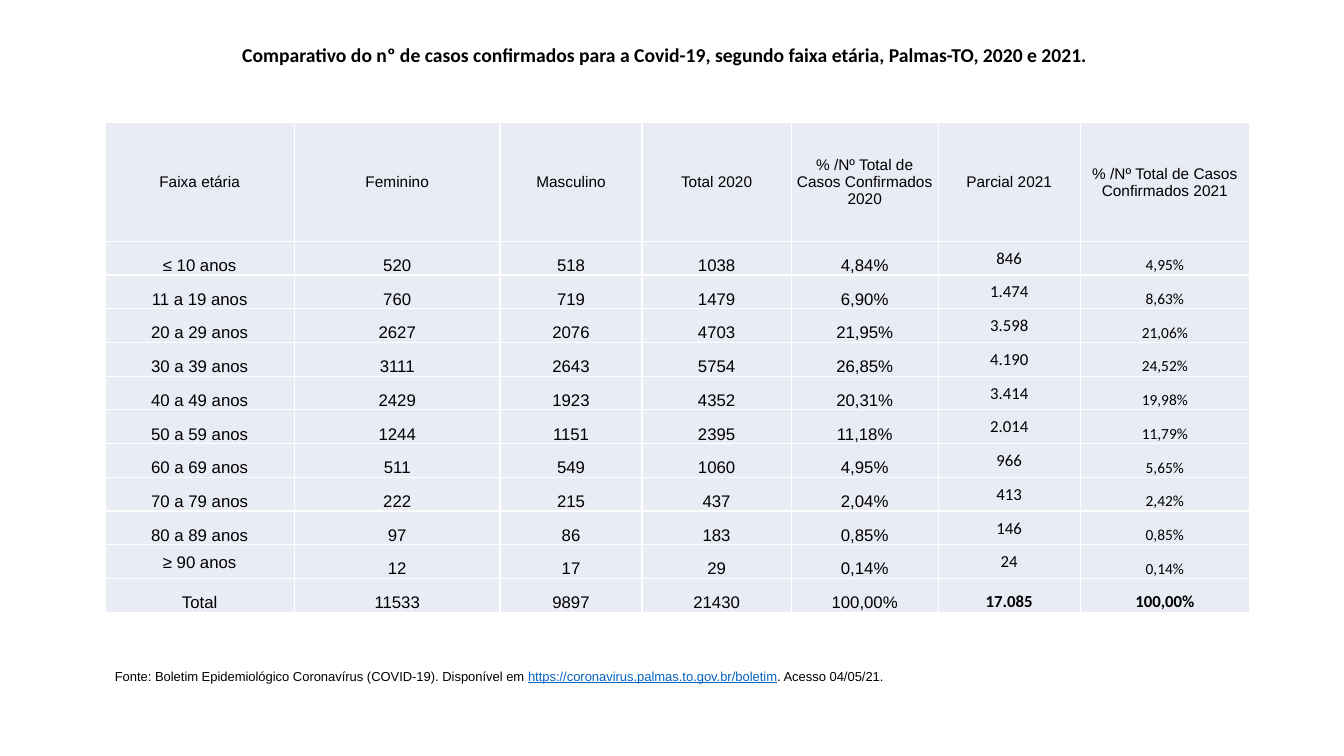
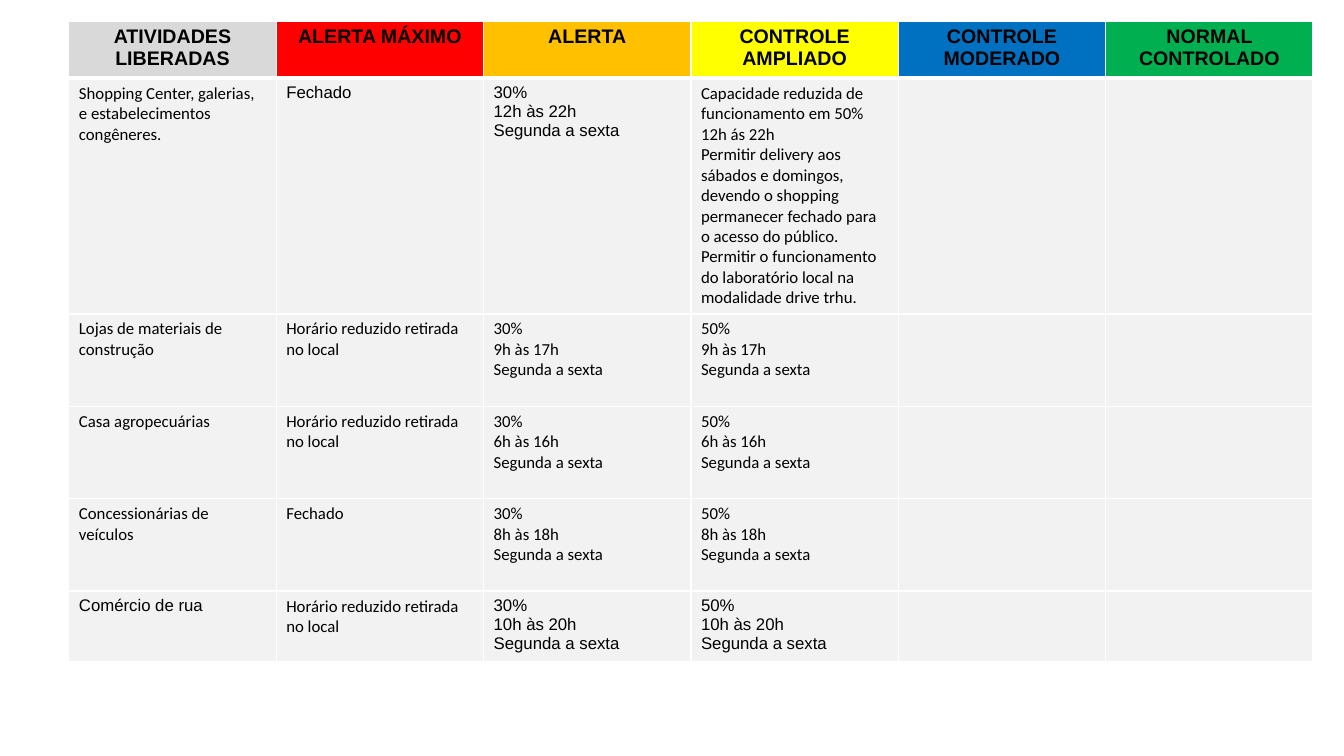
from lxml import etree
from pptx import Presentation
from pptx.dml.color import RGBColor
from pptx.enum import text as t
from pptx.oxml import ns
from pptx.util import Pt

COLORS = {
    "ink": "000000", "rule": "FFFFFF", "link": "0563C1",
    "lilac": "E9EBF5", "pale": "F2F2F2", "gray": "D9D9D9",
    "red": "FF0000", "amber": "FFC000", "yellow": "FFFF00",
    "blue": "0070C0", "green": "00B050",
}
MID, END, TOP = (t.MSO_ANCHOR.MIDDLE, t.MSO_ANCHOR.BOTTOM, t.MSO_ANCHOR.TOP)

AGE_HEAD = ["Faixa etária", "Feminino", "Masculino", "Total 2020",
            "% /Nº Total de Casos Confirmados 2020", "Parcial 2021",
            "% /Nº Total de Casos Confirmados 2021"]
AGE_ROWS = [
    ["≤ 10 anos", "520", "518", "1038", "4,84%", "846", "4,95%"],
    ["11 a 19 anos", "760", "719", "1479", "6,90%", "1.474", "8,63%"],
    ["20 a 29 anos", "2627", "2076", "4703", "21,95%", "3.598", "21,06%"],
    ["30 a 39 anos", "3111", "2643", "5754", "26,85%", "4.190", "24,52%"],
    ["40 a 49 anos", "2429", "1923", "4352", "20,31%", "3.414", "19,98%"],
    ["50 a 59 anos", "1244", "1151", "2395", "11,18%", "2.014", "11,79%"],
    ["60 a 69 anos", "511", "549", "1060", "4,95%", "966", "5,65%"],
    ["70 a 79 anos", "222", "215", "437", "2,04%", "413", "2,42%"],
    ["80 a 89 anos", "97", "86", "183", "0,85%", "146", "0,85%"],
    ["≥ 90 anos", "12", "17", "29", "0,14%", "24", "0,14%"],
    ["Total", "11533", "9897", "21430", "100,00%", "17.085", "100,00%"],
]
AGE_COLS = [135.4, 147, 101.5, 106.6, 105.1, 101.5, 121]

LEVELS = [("ATIVIDADES LIBERADAS", "gray"), ("ALERTA MÁXIMO", "red"),
          ("ALERTA", "amber"), ("CONTROLE AMPLIADO", "yellow"),
          ("CONTROLE MODERADO", "blue"), ("NORMAL CONTROLADO", "green")]
PICKUP = "Horário reduzido retirada no local"
MALL = ["Capacidade reduzida de funcionamento em 50%", "12h ás 22h",
        "Permitir delivery aos sábados e domingos, devendo o shopping "
        "permanecer fechado para o acesso do público. Permitir o "
        "funcionamento do laboratório local na modalidade drive trhu."]


def hours(share, span):
    return [share, span, "Segunda a sexta"]


def shop(name, rule, span):
    return [name, rule, hours("30%", span), hours("50%", span)]


SHOPS = [
    ["Shopping Center, galerias, e estabelecimentos congêneres.",
     "Fechado", hours("30%", "12h às 22h"), MALL],
    shop("Lojas de materiais de construção", PICKUP, "9h às 17h"),
    shop("Casa agropecuárias", PICKUP, "6h às 16h"),
    shop("Concessionárias de veículos", "Fechado", "8h às 18h"),
    shop("Comércio de rua", PICKUP, "10h às 20h"),
]
SHOP_ARIAL = {(1, 1), (1, 2), (5, 0), (5, 2), (5, 3)}


def color(name):
    return RGBColor.from_string(COLORS[name])


def write(frame, lines, size=12, font="Arial", bold=False, center=False):
    """Fill a frame: a string, or a list of lines; a line may be a list
    of (words, is_link) runs."""
    lines = [lines] if isinstance(lines, str) else lines
    for i, line in enumerate(lines):
        para = frame.add_paragraph() if i else frame.paragraphs[0]
        para.alignment = t.PP_ALIGN.CENTER if center else t.PP_ALIGN.LEFT
        runs = [(line, False)] if isinstance(line, str) else line
        for words, link in runs:
            run = para.add_run()
            run.text = words
            run.font.size, run.font.name = Pt(size), font
            run.font.bold, run.font.underline = bold, link
            run.font.color.rgb = color("link" if link else "ink")


def label(slide, box, lines, **style):
    frame = slide.shapes.add_textbox(*map(Pt, box)).text_frame
    frame.word_wrap = True
    write(frame, lines, **style)


def border(cell, base):
    """Draw white rules, the lower one as wide as base."""
    props = cell._tc.get_or_add_tcPr()
    for side, width in (("L", 1), ("R", 1), ("T", 1), ("B", base)):
        line = etree.SubElement(props, ns.qn(f"a:ln{side}"), w=str(Pt(width)))
        fill = etree.SubElement(line, ns.qn("a:solidFill"))
        etree.SubElement(fill, ns.qn("a:srgbClr"), val=COLORS["rule"])


def grid(slide, left, top, cols, rows):
    shape = slide.shapes.add_table(len(rows), len(cols), Pt(left), Pt(top),
                                   Pt(sum(cols)), Pt(sum(rows)))
    table = shape.table
    table.first_row = table.horz_banding = False
    for col, width in zip(table.columns, cols):
        col.width = Pt(width)
    for row, height in zip(table.rows, rows):
        row.height = Pt(height)
    return table


def put(cell, lines, fill, anchor=TOP, base=1, inset=None, **style):
    border(cell, base)
    cell.fill.solid()
    cell.fill.fore_color.rgb = color(fill)
    cell.vertical_anchor = anchor
    if inset is not None:
        cell.margin_left = cell.margin_right = cell.margin_top = Pt(inset)
        cell.margin_bottom = 0
    if lines:
        write(cell.text_frame, lines, **style)


def age_style(row, col):
    """Format of one cell of the age table."""
    if row == 0:
        return dict(size=11, anchor=MID)
    if col < 5:
        return dict(anchor=MID if (row, col) == (10, 0) else END)
    if row == len(AGE_ROWS):
        return dict(font="Calibri", bold=True, anchor=END)
    if col == 5:
        return dict(font="Calibri", anchor=MID)
    return dict(font="Calibri", size=11, anchor=END)


def ages(slide):
    table = grid(slide, 75, 87.5, AGE_COLS, [84.8] + [24.1] * len(AGE_ROWS))
    for r, row in enumerate([AGE_HEAD] + AGE_ROWS):
        for c, words in enumerate(row):
            put(table.cell(r, c), words, "lilac", inset=0.7, center=True,
                **age_style(r, c))
    label(slide, (83.5, 27.4, 783.4, 24.5),
          "Comparativo do nº de casos confirmados para a Covid-19, segundo "
          "faixa etária, Palmas-TO, 2020 e 2021.",
          size=14, font="Calibri", bold=True, center=True)
    label(slide, (75, 473.8, 825, 18.7),
          [[("Fonte: Boletim Epidemiológico Coronavírus (COVID-19). "
             "Disponível em ", False),
            ("https://coronavirus.palmas.to.gov.br/boletim", True),
            (". Acesso 04/05/21.", False)]], size=9.3)


def levels(slide):
    table = grid(slide, 49.2, 15, [148.2] * len(LEVELS),
                 [39, 168.4, 66, 66, 66, 50])
    for c, (words, fill) in enumerate(LEVELS):
        put(table.cell(0, c), words, fill, base=3, size=14, bold=True,
            center=True)
    for r, row in enumerate(SHOPS, 1):
        for c, lines in enumerate(row + ["", ""]):
            font = "Arial" if (r, c) in SHOP_ARIAL else "Calibri"
            put(table.cell(r, c), lines, "pale", font=font)


def main():
    deck = Presentation()
    deck.slide_width, deck.slide_height = Pt(960.5), Pt(540)
    for draw in (ages, levels):
        draw(deck.slides.add_slide(deck.slide_layouts[6]))
    deck.save("out.pptx")


if __name__ == "__main__":
    main()
